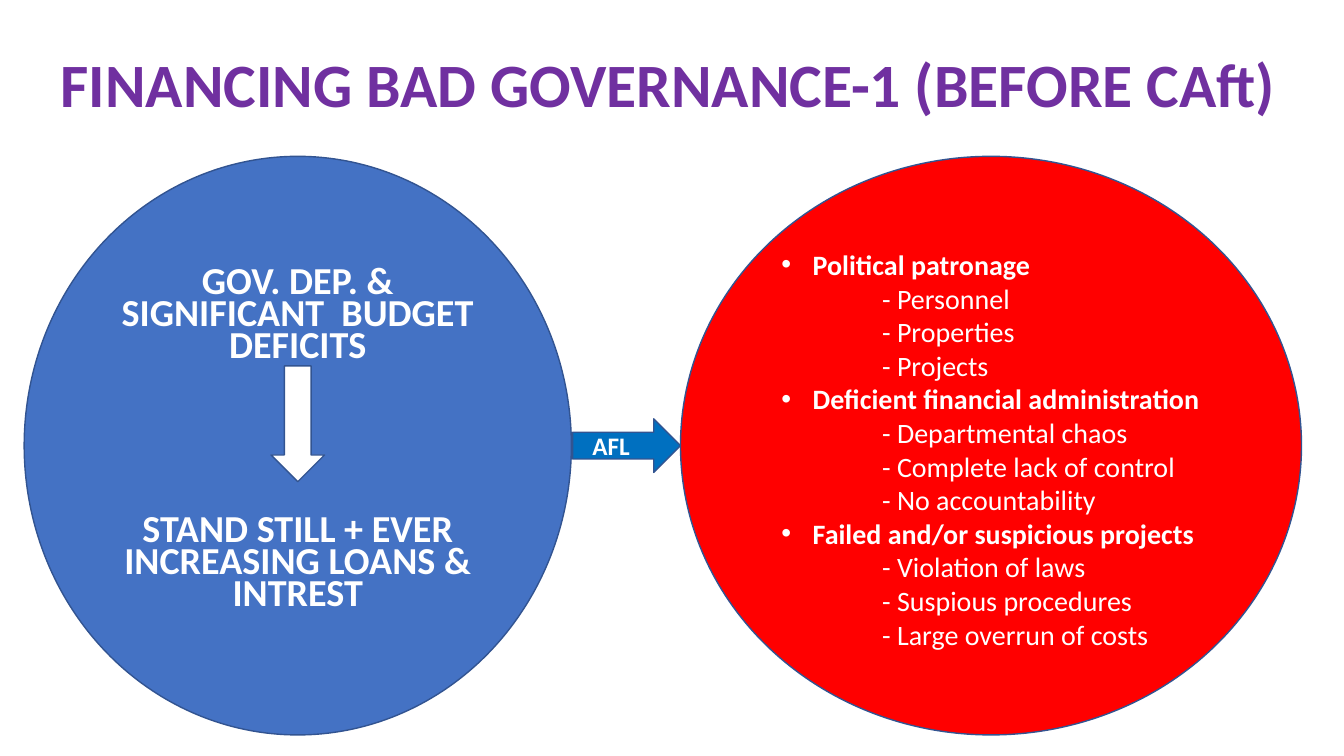
from lxml import etree
from pptx import Presentation
from pptx.dml.color import RGBColor
from pptx.enum.shapes import MSO_SHAPE
from pptx.enum.text import MSO_ANCHOR, PP_ALIGN
from pptx.oxml.ns import qn
from pptx.util import Cm, Pt

OVAL, RIGHT, DOWN = MSO_SHAPE.OVAL, MSO_SHAPE.RIGHT_ARROW, MSO_SHAPE.DOWN_ARROW
MIDDLE, CENTER, LEFT = MSO_ANCHOR.MIDDLE, PP_ALIGN.CENTER, PP_ALIGN.LEFT

PURPLE = RGBColor(0x70, 0x30, 0xA0)
BLUE = RGBColor(0x44, 0x72, 0xC4)
RED = RGBColor(0xFF, 0x00, 0x00)
AZURE = RGBColor(0x00, 0x70, 0xC0)
NAVY = RGBColor(0x32, 0x54, 0x91)
WHITE = RGBColor(0xFF, 0xFF, 0xFF)

FONT = "Calibri"
CAUSES = [
    "GOV. DEP. & SIGNIFICANT  BUDGET DEFICITS",
    "STAND STILL + EVER INCREASING LOANS & INTREST",
]
EFFECTS = {
    "Political patronage": ["Personnel", "Properties", "Projects"],
    "Deficient financial administration": [
        "Departmental chaos", "Complete lack of control", "No accountability"],
    "Failed and/or suspicious projects": [
        "Violation of laws", "Suspious procedures", "Large overrun of costs"],
}


def add_run(para, text, size, color=WHITE, bold=True):
    run = para.add_run()
    run.text = text
    font = run.font
    font.name, font.size, font.bold = FONT, Pt(size), bold
    font.color.rgb = color


def next_para(frame, first):
    return frame.paragraphs[0] if first else frame.add_paragraph()


def indent(para, margin, hang=0, bullet=None):
    props = para._p.get_or_add_pPr()
    props.set("marL", str(Cm(margin)))
    props.set("indent", str(Cm(-hang)))
    if bullet:
        etree.SubElement(props, qn("a:buFont")).set("typeface", "Arial")
        etree.SubElement(props, qn("a:buChar")).set("char", bullet)


def add_form(slide, kind, box, fill):
    form = slide.shapes.add_shape(kind, *map(Cm, box))
    form.shadow.inherit = False
    form.fill.solid()
    form.fill.fore_color.rgb = fill
    form.line.color.rgb = NAVY
    form.line.width = Pt(1)
    frame = form.text_frame
    frame.word_wrap = True
    frame.vertical_anchor = MIDDLE
    return frame


def add_label(slide, box, text, size, color, align, wrap=True):
    frame = slide.shapes.add_textbox(*map(Cm, box)).text_frame
    frame.word_wrap = wrap
    frame.vertical_anchor = MIDDLE
    para = frame.paragraphs[0]
    para.alignment = align
    add_run(para, text, size, color)
    return para


# Heading across the top
def add_title(slide, box):
    para = add_label(slide, box, "FINANCING BAD GOVERNANCE-1 (BEFORE CAft)",
                     44, PURPLE, CENTER)
    para.line_spacing = 0.9


# Blue circle: two statements with a down arrow between them
def add_causes(slide, box):
    left, top, width, height = box
    frame = add_form(slide, OVAL, box, BLUE)
    frame.margin_bottom = Cm(0.36)
    for i, cause in enumerate(CAUSES):
        para = next_para(frame, i == 0)
        para.alignment = CENTER
        para.line_spacing = 0.7
        para.space_before = Pt(108 * i)
        add_run(para, cause, 27.2)
    wide, tall = 1.35, 2.92
    mid = top + height / 2 - 0.55
    add_form(slide, DOWN, (left + (width - wide) / 2, mid - tall / 2, wide, tall), WHITE)


# Red circle: bulleted heads, each with its own items
def add_effects(slide, box):
    frame = add_form(slide, OVAL, box, RED)
    frame.margin_top = Cm(0.3)
    for i, (head, items) in enumerate(EFFECTS.items()):
        para = next_para(frame, i == 0)
        para.alignment = LEFT
        indent(para, 0.79, 0.79, "•")
        add_run(para, head, 20)
        for item in items:
            para = frame.add_paragraph()
            para.alignment = LEFT
            indent(para, 2.54)
            add_run(para, f"- {item}", 20, bold=False)


# Arrow from the blue circle to the red one
def add_link(slide, box):
    left, top, width, height = box
    add_form(slide, RIGHT, box, AZURE)
    add_label(slide, (left + 0.25, top + 0.16, 1.6, 1.02), "AFL", 18, WHITE, LEFT, False)


def main():
    deck = Presentation()
    deck.slide_width, deck.slide_height = Cm(33.87), Cm(19.05)
    slide = deck.slides.add_slide(deck.slide_layouts[6])
    top, tall = 3.94, 14.58
    thick = 1.35
    add_title(slide, (1.22, 1.02, 31.27, 2.36))
    add_effects(slide, (17.15, top, 15.65, tall))
    add_causes(slide, (0.61, top, 13.79, tall))
    add_link(slide, (14.43, top + (tall - thick) / 2, 2.72, thick))
    deck.save("out.pptx")


if __name__ == "__main__":
    main()
